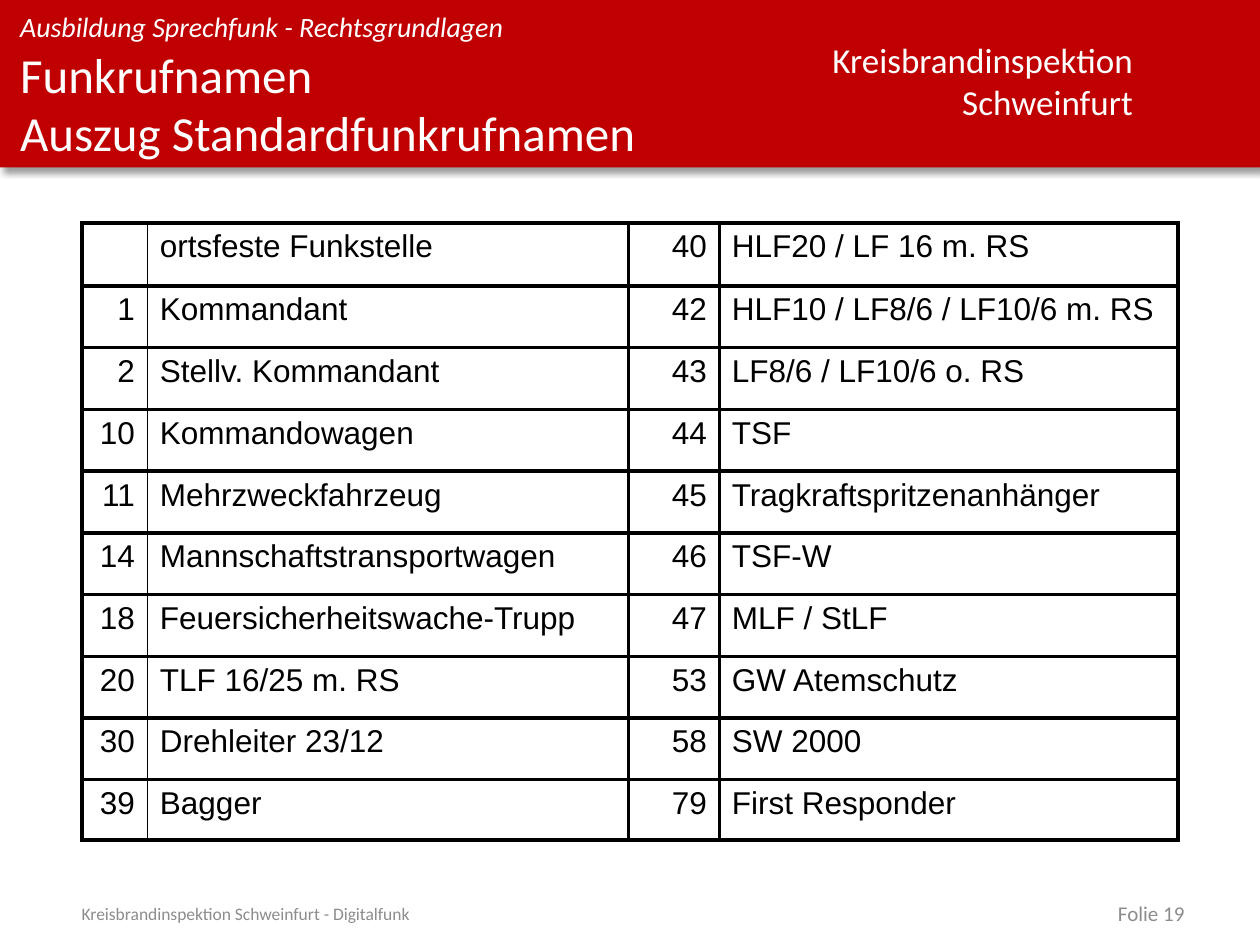
import pptx
import pptx.dml.color
import pptx.enum.shapes
import pptx.enum.text
import pptx.oxml
import pptx.oxml.ns
import pptx.util

Inches = pptx.util.Inches
Pt = pptx.util.Pt
RGBColor = pptx.dml.color.RGBColor
ALIGN = pptx.enum.text.PP_ALIGN
ANCHOR = pptx.enum.text.MSO_ANCHOR

RED = RGBColor(0xC0, 0x00, 0x00)
WHITE = RGBColor(0xFF, 0xFF, 0xFF)
BLACK = RGBColor(0x00, 0x00, 0x00)
GREY = RGBColor(0x8C, 0x8C, 0x8C)

THICK, THIN = 2.25, 1
COLUMN_WIDTHS = [0.52, 3.82, 0.72, 3.64]
ROW_HEIGHTS = [0.5] + [0.49] * 8 + [0.48]
COLUMN_ALIGNMENTS = [ALIGN.RIGHT, ALIGN.LEFT, ALIGN.RIGHT, ALIGN.LEFT]
COLUMN_EDGES = [(THICK, THIN), (THIN, THICK), (THICK, THICK), (THICK, THICK)]

CALL_NAMES = [
    ("", "ortsfeste Funkstelle", "40", "HLF20 / LF 16 m. RS"),
    ("1", "Kommandant", "42", "HLF10 / LF8/6 / LF10/6 m. RS"),
    ("2", "Stellv. Kommandant", "43", "LF8/6 / LF10/6 o. RS"),
    ("10", "Kommandowagen", "44", "TSF"),
    ("11", "Mehrzweckfahrzeug", "45", "Tragkraftspritzenanhänger"),
    ("14", "Mannschaftstransportwagen", "46", "TSF-W"),
    ("18", "Feuersicherheitswache-Trupp", "47", "MLF / StLF"),
    ("20", "TLF 16/25 m. RS", "53", "GW Atemschutz"),
    ("30", "Drehleiter 23/12", "58", "SW 2000"),
    ("39", "Bagger", "79", "First Responder"),
]


def add_run(paragraph, text, size, color, font="Calibri", italic=False):
    run = paragraph.add_run()
    run.text = text
    run.font.size = Pt(size)
    run.font.name = font
    run.font.italic = italic
    run.font.color.rgb = color


def set_up_frame(frame, inset, anchor):
    frame.word_wrap = True
    frame.auto_size = pptx.enum.text.MSO_AUTO_SIZE.NONE
    frame.vertical_anchor = anchor
    frame.margin_left = frame.margin_right = Inches(inset)
    frame.margin_top = frame.margin_bottom = Inches(inset / 2)


def add_label(slide, box, lines, size, color, align=ALIGN.LEFT,
              anchor=ANCHOR.TOP, inset=0.1, italic=False):
    label = slide.shapes.add_textbox(*map(Inches, box))
    frame = label.text_frame
    set_up_frame(frame, inset, anchor)
    for index, line in enumerate(lines):
        paragraph = frame.add_paragraph() if index else frame.paragraphs[0]
        paragraph.alignment = align
        add_run(paragraph, line, size, color, italic=italic)


def add_banner(slide):
    banner = slide.shapes.add_shape(
        pptx.enum.shapes.MSO_SHAPE.RECTANGLE, 0, 0, Inches(10), Inches(1.33))
    banner.fill.solid()
    banner.fill.fore_color.rgb = RED
    banner.line.fill.background()
    banner.shadow.inherit = False
    effects = banner._element.spPr.find(pptx.oxml.ns.qn("a:effectLst"))
    effects.append(pptx.oxml.parse_xml(
        f'<a:outerShdw {pptx.oxml.ns.nsdecls("a")} blurRad="{Pt(4)}" '
        f'dist="{Pt(3)}" dir="2700000" algn="tl" rotWithShape="0">'
        f'<a:srgbClr val="{BLACK}"><a:alpha val="40000"/></a:srgbClr>'
        '</a:outerShdw>'))
    slide.shapes._spTree.insert(2, banner._element)


def fill_title(title, lines):
    title.left, title.top, title.width, title.height = map(
        Inches, (0.16, 0.35, 6.32, 0.99))
    set_up_frame(title.text_frame, 0, ANCHOR.TOP)
    paragraph = title.text_frame.paragraphs[0]
    paragraph.alignment = ALIGN.LEFT
    for index, line in enumerate(lines):
        if index:
            paragraph.add_line_break()
        add_run(paragraph, line, 28, WHITE)


def set_borders(cell, left, right):
    properties = cell._tc.get_or_add_tcPr()
    edges = {"lnL": left, "lnR": right, "lnT": THICK, "lnB": THICK}
    for position, (edge, width) in enumerate(edges.items()):
        properties.insert(position, pptx.oxml.parse_xml(
            f'<a:{edge} {pptx.oxml.ns.nsdecls("a")} w="{Pt(width)}">'
            f'<a:solidFill><a:srgbClr val="{BLACK}"/></a:solidFill>'
            f'</a:{edge}>'))


def add_call_name_table(slide):
    table = slide.shapes.add_table(
        len(CALL_NAMES), len(COLUMN_WIDTHS), Inches(0.65), Inches(1.77),
        Inches(sum(COLUMN_WIDTHS)), Inches(sum(ROW_HEIGHTS))).table
    table.first_row = table.horz_banding = False
    for column, width in zip(table.columns, COLUMN_WIDTHS):
        column.width = Inches(width)
    for row, height, entries in zip(table.rows, ROW_HEIGHTS, CALL_NAMES):
        row.height = Inches(height)
        for cell, entry, align, edges in zip(
                row.cells, entries, COLUMN_ALIGNMENTS, COLUMN_EDGES):
            cell.fill.background()
            set_borders(cell, *edges)
            paragraph = cell.text_frame.paragraphs[0]
            paragraph.alignment = align
            if entry:
                add_run(paragraph, entry, 18, BLACK, font="Arial")


def main():
    presentation = pptx.Presentation()
    presentation.slide_width = Inches(10)
    presentation.slide_height = Inches(7.5)
    slide = presentation.slides.add_slide(presentation.slide_layouts[5])

    add_banner(slide)
    fill_title(slide.shapes.title,
               ["Funkrufnamen", "Auszug Standardfunkrufnamen"])
    add_label(slide, (6.48, 0.26, 2.61, 0.77),
              ["Kreisbrandinspektion", "Schweinfurt"], 20, WHITE, ALIGN.RIGHT)
    add_label(slide, (0.16, 0.08, 6.32, 0.27),
              ["Ausbildung Sprechfunk - Rechtsgrundlagen"], 16, WHITE,
              inset=0, italic=True)
    add_label(slide, (0.55, 7.15, 6.04, 0.2),
              ["Kreisbrandinspektion Schweinfurt - Digitalfunk"], 10, GREY,
              anchor=ANCHOR.MIDDLE)
    add_label(slide, (7.17, 7.15, 2.33, 0.2), ["Folie 19"], 12, GREY,
              ALIGN.RIGHT, ANCHOR.MIDDLE)
    add_call_name_table(slide)

    presentation.save("out.pptx")


if __name__ == "__main__":
    main()
